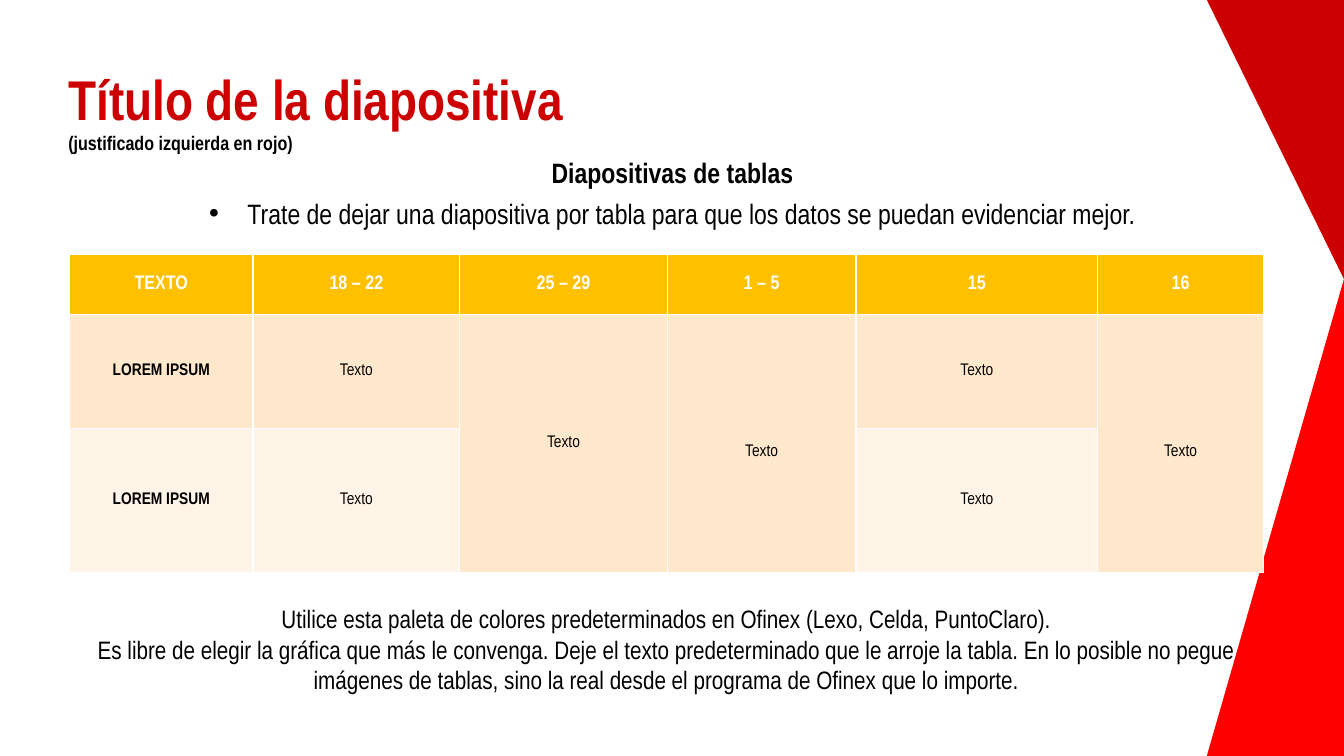
from lxml.etree import SubElement
from pptx import Presentation
from pptx.dml.color import RGBColor
from pptx.enum.shapes import MSO_SHAPE
from pptx.enum.text import MSO_ANCHOR, PP_ALIGN
from pptx.oxml.ns import qn
from pptx.util import Inches, Pt

DARK_RED = RGBColor(0xCC, 0x00, 0x00)
RED = RGBColor(0xFF, 0x00, 0x00)
GOLD = RGBColor(0xFF, 0xC0, 0x00)
PEACH = RGBColor(0xFF, 0xE8, 0xCC)
CREAM = RGBColor(0xFF, 0xF4, 0xE7)
BLACK = RGBColor(0x00, 0x00, 0x00)
WHITE = RGBColor(0xFF, 0xFF, 0xFF)

COLUMN_WIDTHS = [1.82, 2.05, 2.06, 1.87, 2.4, 1.64]
ROW_HEIGHTS = [0.6, 1.13, 1.43]
ROWS = [
    ["TEXTO", "18 – 22", "25 – 29", "1 – 5", "15", "16"],
    ["LOREM IPSUM", "Texto", "Texto", "Texto", "Texto", "Texto"],
    ["LOREM IPSUM", "Texto", None, None, "Texto", None],
]
ROW_STYLES = [(GOLD, WHITE, 14), (PEACH, BLACK, 12), (CREAM, BLACK, 12)]
LOWERED_COLUMNS = (3, 5)


def apply_format(target, values):
    for name, value in values.items():
        setattr(target, name, value)


class TablePage:
    font_name = "Arial Narrow"

    def __init__(self, deck):
        self.page = deck.slides.add_slide(deck.slide_layouts[6])

    def add_span(self, para, text, size, color=BLACK, bold=False, **layout):
        apply_format(para, layout)
        span = para.add_run()
        span.text = text
        apply_format(span.font, {"name": self.font_name, "size": Pt(size), "bold": bold})
        span.font.color.rgb = color

    def add_triangle(self, place, color, rotation=0, mirrored=False):
        shape = self.page.shapes.add_shape(MSO_SHAPE.RIGHT_TRIANGLE, *map(Inches, place))
        shape.shadow.inherit = False
        shape.fill.solid()
        shape.fill.fore_color.rgb = color
        shape.line.fill.background()
        shape.rotation = rotation
        if mirrored:
            shape.element.spPr.xfrm.set("flipH", "1")

    def add_text(self, place, paragraphs, anchor=MSO_ANCHOR.TOP):
        """Add a text box; each paragraph is a dict of arguments for add_span, plus bullet."""
        frame = self.page.shapes.add_textbox(*map(Inches, place)).text_frame
        apply_format(frame, {"word_wrap": True, "vertical_anchor": anchor})
        for index, values in enumerate(paragraphs):
            para = frame.add_paragraph() if index else frame.paragraphs[0]
            values = dict(values)
            if values.pop("bullet", False):
                self.add_bullet(para)
            self.add_span(para, **values)

    def add_bullet(self, para):
        properties = para._p.get_or_add_pPr()
        indent = Inches(0.38)
        properties.set("marL", str(indent))
        properties.set("indent", str(-indent))
        SubElement(properties, qn("a:buFont")).set("typeface", "Arial")
        SubElement(properties, qn("a:buChar")).set("char", "•")

    def add_table(self, left, top):
        size = (sum(COLUMN_WIDTHS), sum(ROW_HEIGHTS))
        table = self.page.shapes.add_table(
            len(ROWS), len(COLUMN_WIDTHS), *map(Inches, (left, top, *size))).table
        for column, width in zip(table.columns, COLUMN_WIDTHS):
            column.width = Inches(width)
        for row, height in zip(table.rows, ROW_HEIGHTS):
            row.height = Inches(height)
        for r, (texts, (fill, color, points)) in enumerate(zip(ROWS, ROW_STYLES)):
            for c, text in enumerate(texts):
                cell = table.cell(r, c)
                if text is None:
                    table.cell(r - 1, c).merge(cell)
                    continue
                cell.fill.solid()
                cell.fill.fore_color.rgb = fill
                cell.vertical_anchor = MSO_ANCHOR.MIDDLE
                if r == 1 and c in LOWERED_COLUMNS:
                    cell.margin_top = Inches(0.22)
                self.add_span(cell.text_frame.paragraphs[0], text, points, color,
                              bold=r == 0 or c == 0, alignment=PP_ALIGN.CENTER)


def main():
    deck = Presentation()
    deck.slide_width, deck.slide_height = Inches(13.33), Inches(7.5)
    page = TablePage(deck)

    page.add_triangle((11.97, 2.77, 1.36, 4.73), RED, mirrored=True)
    page.add_triangle((11.97, 0, 1.36, 2.77), DARK_RED, rotation=180)

    heading = {"bold": True, "line_spacing": 0.9}
    page.add_text((0.58, 0.4, 7.47, 1.45), [
        {"text": "Título de la diapositiva", "size": 40, "color": DARK_RED, **heading},
        {"text": "(justificado izquierda en rojo)", "size": 14, **heading},
    ], MSO_ANCHOR.MIDDLE)

    intro = {"size": 20, "alignment": PP_ALIGN.CENTER, "line_spacing": 0.8}
    page.add_text((0.92, 1.56, 11.5, 0.96), [
        {"text": "Diapositivas de tablas", "bold": True, **intro},
        {"text": "Trate de dejar una diapositiva por tabla para que los datos "
                 "se puedan evidenciar mejor.",
         "bullet": True, "space_before": Pt(10), **intro},
    ])

    advice = {"size": 18, "alignment": PP_ALIGN.CENTER}
    page.add_text((0.86, 5.94, 11.5, 1.01), [
        {"text": "Utilice esta paleta de colores predeterminados en Ofinex "
                 "(Lexo, Celda, PuntoClaro).", **advice},
        {"text": "Es libre de elegir la gráfica que más le convenga. Deje el texto "
                 "predeterminado que le arroje la tabla. En lo posible no pegue imágenes "
                 "de tablas, sino la real desde el programa de Ofinex que lo importe.",
         **advice},
    ])

    page.add_table(0.69, 2.52)
    deck.save("out.pptx")


if __name__ == "__main__":
    main()
